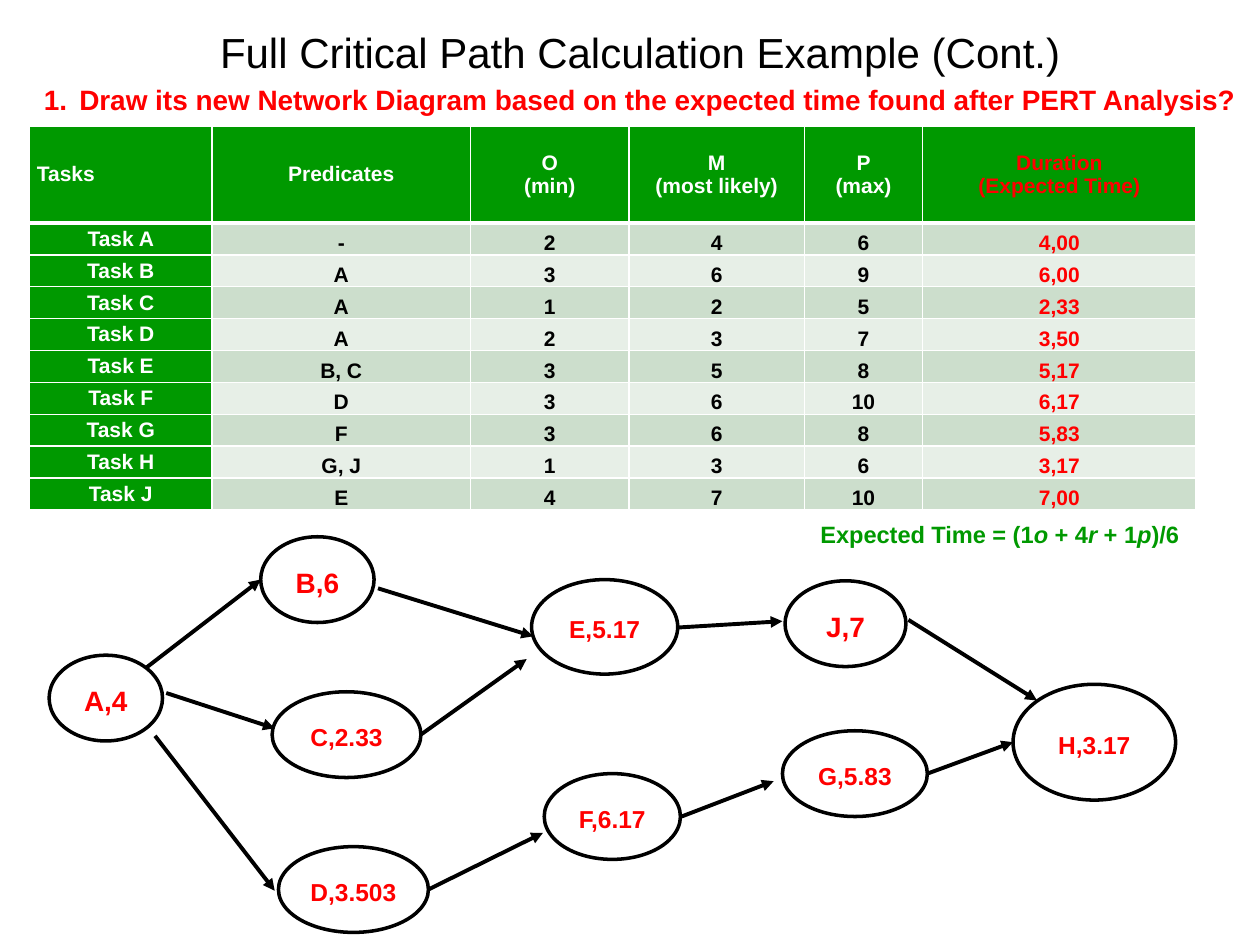
from copy import deepcopy
from typing import NamedTuple

from lxml import etree
from pptx import Presentation
from pptx.dml.color import RGBColor
from pptx.enum.shapes import MSO_CONNECTOR, MSO_SHAPE
from pptx.enum.text import MSO_ANCHOR, MSO_AUTO_SIZE, PP_ALIGN
from pptx.oxml.ns import qn
from pptx.util import Pt

CENTER, LEFT = PP_ALIGN.CENTER, PP_ALIGN.LEFT
MIDDLE, BOTTOM = MSO_ANCHOR.MIDDLE, MSO_ANCHOR.BOTTOM
OVAL, STRAIGHT = MSO_SHAPE.FLOWCHART_CONNECTOR, MSO_CONNECTOR.STRAIGHT
FIT_SHAPE, NO_FIT = MSO_AUTO_SIZE.SHAPE_TO_FIT_TEXT, MSO_AUTO_SIZE.NONE

BLACK = RGBColor(0x00, 0x00, 0x00)
WHITE = RGBColor(0xFF, 0xFF, 0xFF)
RED = RGBColor(0xFF, 0x00, 0x00)
GREEN = RGBColor(0x00, 0x99, 0x00)
BANDS = (RGBColor(0xCC, 0xDE, 0xCC), RGBColor(0xE7, 0xEF, 0xE7))

COLUMN_WIDTHS = (104.4, 147.6, 90.7, 100.1, 67.7, 156.2)
HEADER_HEIGHT, TASK_HEIGHT = 55.4, 18.24
HEADERS = ("Tasks", "Predicates", "O\n(min)", "M\n(most likely)", "P\n(max)",
           "Duration\n(Expected Time)")
TASKS = (
    ("Task A", "-", "2", "4", "6", "4,00"),
    ("Task B", "A", "3", "6", "9", "6,00"),
    ("Task C", "A", "1", "2", "5", "2,33"),
    ("Task D", "A", "2", "3", "7", "3,50"),
    ("Task E", "B, C", "3", "5", "8", "5,17"),
    ("Task F", "D", "3", "6", "10", "6,17"),
    ("Task G", "F", "3", "6", "8", "5,83"),
    ("Task H", "G, J", "1", "3", "6", "3,17"),
    ("Task J", "E", "4", "7", "10", "7,00"),
)


class Activity(NamedTuple):
    label: str
    left: float
    top: float
    width: float
    height: float = 49
    size: float = 14


class Dependency(NamedTuple):
    start_x: float
    start_y: float
    end_x: float
    end_y: float


ACTIVITIES = (
    Activity("A,4", 28.1, 374.4, 64.8, size=16),
    Activity("B,6", 149, 306.7, 64.8, size=16),
    Activity("C,2.33", 155.5, 395.3, 85),
    Activity("D,3.503", 159.1, 483.8, 85.7),
    Activity("E,5.17", 303.8, 331.2, 83.5, 54),
    Activity("F,6.17", 311, 442.1, 77.8),
    Activity("G,5.83", 447.1, 417.6, 82.8),
    Activity("J,7", 448.6, 331.9, 69.1, size=16),
    Activity("H,3.17", 578.9, 391, 92.9, 66.2),
)

DEPENDENCIES = (
    Dependency(83.5, 381.6, 149, 331.2),
    Dependency(95, 396, 157, 416.2),
    Dependency(88.6, 420.5, 157, 509),
    Dependency(216, 336.2, 304.6, 363.6),
    Dependency(240.5, 419.8, 301, 376.6),
    Dependency(244.8, 508.3, 310.3, 475.9),
    Dependency(387.4, 358.6, 447.1, 355),
    Dependency(389.5, 466.6, 442.1, 446.4),
    Dependency(519.1, 354.2, 592.6, 400.3),
    Dependency(529.9, 442.1, 578.9, 424.1),
)


def write(paragraph, text: str, *, size: float, color: RGBColor,
          bold: bool = True, italic: bool = False, align=CENTER) -> None:
    paragraph.alignment = align
    for number, line in enumerate(text.split("\n")):
        if number:
            paragraph.add_line_break()
        run = paragraph.add_run()
        run.text = line
        font = run.font
        font.name, font.size, font.bold, font.italic = "Arial", Pt(size), bold, italic
        font.color.rgb = color
        for line_break in paragraph._p.findall(qn("a:br")):
            if not len(line_break):
                line_break.append(deepcopy(run._r.get_or_add_rPr()))


def add_border(cell, side: str, width: float) -> None:
    border = etree.SubElement(cell._tc.get_or_add_tcPr(), qn(f"a:{side}"), w=str(Pt(width)))
    fill = etree.SubElement(border, qn("a:solidFill"))
    etree.SubElement(fill, qn("a:srgbClr"), val=str(WHITE))


def format_cell(cell, text: str, *, fill: RGBColor, color: RGBColor, anchor,
                align=CENTER, top: float = 1, bottom: float = 1) -> None:
    cell.margin_left = cell.margin_right = Pt(4.3)
    cell.margin_top = cell.margin_bottom = Pt(0)
    cell.vertical_anchor = anchor
    for side, width in (("lnL", 1), ("lnR", 1), ("lnT", top), ("lnB", bottom)):
        add_border(cell, side, width)
    cell.fill.solid()
    cell.fill.fore_color.rgb = fill
    write(cell.text_frame.paragraphs[0], text, size=12, color=color, align=align)


def add_task_table(slide) -> None:
    rows, last = len(TASKS) + 1, len(HEADERS) - 1
    table = slide.shapes.add_table(
        rows, len(HEADERS), Pt(16.8), Pt(72), Pt(sum(COLUMN_WIDTHS)),
        Pt(HEADER_HEIGHT + TASK_HEIGHT * len(TASKS))).table
    for column, width in zip(table.columns, COLUMN_WIDTHS):
        column.width = Pt(width)
    for index, row in enumerate(table.rows):
        row.height = Pt(TASK_HEIGHT if index else HEADER_HEIGHT)
    for column, header in enumerate(HEADERS):
        format_cell(table.cell(0, column), header, fill=GREEN,
                    color=RED if column == last else WHITE, anchor=MIDDLE,
                    align=CENTER if column else LEFT, bottom=3)
    for row, task in enumerate(TASKS, 1):
        for column, value in enumerate(task):
            is_name = column == 0
            color = WHITE if is_name else RED if column == last else BLACK
            format_cell(table.cell(row, column), value, color=color,
                        fill=GREEN if is_name else BANDS[(row - 1) % 2],
                        anchor=MIDDLE if is_name else BOTTOM, top=3 if row == 1 else 1)


def add_activity(slide, activity: Activity) -> None:
    node = slide.shapes.add_shape(OVAL, Pt(activity.left), Pt(activity.top),
                                  Pt(activity.width), Pt(activity.height))
    node.shadow.inherit = False
    node.fill.solid()
    node.fill.fore_color.rgb = WHITE
    node.line.color.rgb = BLACK
    node.line.width = Pt(2)
    frame = node.text_frame
    frame.margin_left = frame.margin_right = Pt(5)
    frame.margin_top = frame.margin_bottom = Pt(3)
    frame.vertical_anchor = MIDDLE
    label = frame.paragraphs[0]
    label.line_spacing = 1.15
    label.space_after = Pt(7.5)
    write(label, activity.label, size=activity.size, color=RED)


def add_dependency(slide, dependency: Dependency) -> None:
    arrow = slide.shapes.add_connector(STRAIGHT, *(Pt(value) for value in dependency))
    arrow.line.color.rgb = BLACK
    arrow.line.width = Pt(2.25)
    etree.SubElement(arrow.line._get_or_add_ln(), qn("a:tailEnd"), type="triangle")
    etree.SubElement(arrow._element.spPr, qn("a:effectLst"))


def add_title(slide) -> None:
    title = slide.shapes.title
    title.left, title.top, title.width, title.height = Pt(95.8), Pt(7.2), Pt(540), Pt(44.6)
    title.text_frame.auto_size = NO_FIT
    title.text_frame.vertical_anchor = MIDDLE
    write(title.text_frame.paragraphs[0], "Full Critical Path Calculation Example (Cont.)",
          size=24, color=BLACK, bold=False)


def add_formula(slide) -> None:
    formula = slide.shapes.add_textbox(Pt(460), Pt(293.8), Pt(222.5), Pt(23.8)).text_frame
    formula.word_wrap = False
    formula.auto_size = FIT_SHAPE
    for number, part in enumerate(("Expected Time = (1", "o", " + 4", "r", " + 1", "p", ")/6")):
        write(formula.paragraphs[0], part, size=13.5, color=GREEN, italic=number % 2 == 1)


def add_question(slide) -> None:
    question = slide.shapes.add_textbox(Pt(18), Pt(43.9), Pt(702), Pt(26.6)).text_frame
    question.word_wrap = True
    question.auto_size = FIT_SHAPE
    paragraph = question.paragraphs[0]
    write(paragraph, "Draw its new Network Diagram based on the expected time "
          "found after PERT Analysis?", size=16, color=RED, align=LEFT)
    properties = paragraph._p.get_or_add_pPr()
    properties.set("marL", str(Pt(20.2)))
    properties.set("indent", str(-Pt(20.2)))
    etree.SubElement(properties, qn("a:buFont"), typeface="+mj-lt")
    etree.SubElement(properties, qn("a:buAutoNum"), type="arabicPeriod")


def main() -> None:
    presentation = Presentation()
    presentation.slide_width, presentation.slide_height = Pt(720), Pt(540)
    slide = presentation.slides.add_slide(presentation.slide_layouts[5])
    add_title(slide)
    add_formula(slide)
    add_task_table(slide)
    for activity in ACTIVITIES:
        add_activity(slide, activity)
    for dependency in DEPENDENCIES:
        add_dependency(slide, dependency)
    add_question(slide)
    presentation.save("out.pptx")


if __name__ == "__main__":
    main()
